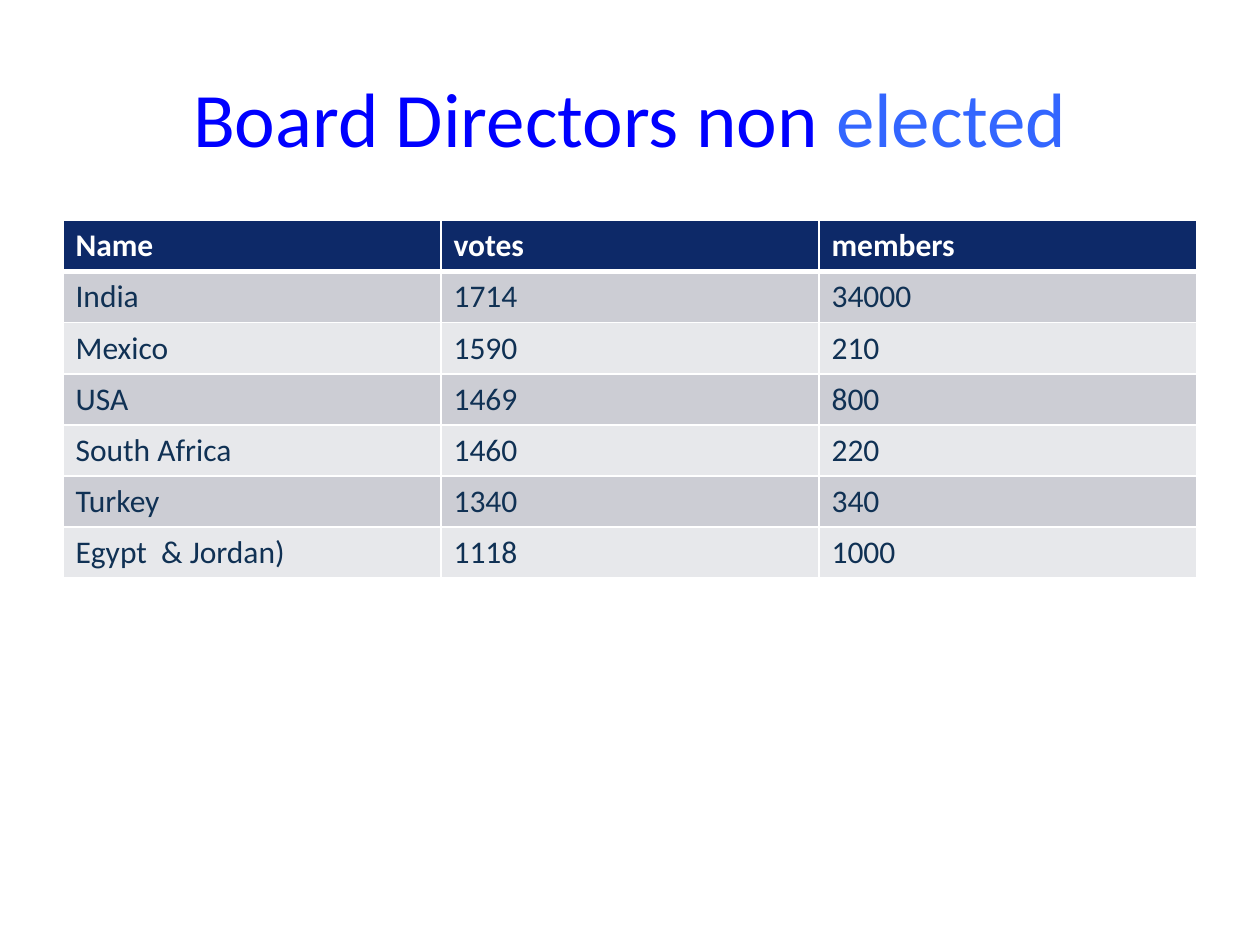
from dataclasses import dataclass

from lxml.etree import SubElement
from pptx import Presentation
from pptx.dml.color import RGBColor as RGB
from pptx.enum.text import MSO_ANCHOR as ANCHOR, PP_ALIGN as ALIGN
from pptx.oxml.ns import qn
from pptx.util import Pt


@dataclass(frozen=True)
class Theme:
    font: str = "Calibri"
    title_size: int = 44
    table_size: int = 18
    title: str = "0000FF"
    title_accent: str = "3366FF"
    header_fill: str = "0D2968"
    header_text: str = "FFFFFF"
    body_text: str = "103154"
    bands: tuple = ("CCCDD4", "E7E8EB")
    border: str = "FFFFFF"


THEME = Theme()

TITLE = [
    ("Board Directors non ", THEME.title),
    ("elected", THEME.title_accent),
]
ROWS = [
    ("Name", "votes", "members"),
    ("India", "1714", "34000"),
    ("Mexico", "1590", "210"),
    ("USA", "1469", "800"),
    ("South Africa", "1460", "220"),
    ("Turkey", "1340", "340"),
    ("Egypt  & Jordan)", "1118", "1000"),
]

SLIDE_W, SLIDE_H = 720, 540
MARGIN = 36
CONTENT_W = SLIDE_W - 2 * MARGIN
TITLE_TOP, TITLE_H = 21.6, 90
TABLE_TOP, ROW_H = 126, 29.2
THIN, THICK = 1, 3


def add_run(p, text, size, color, bold=False):
    r = p.add_run()
    r.text = text
    r.font.name = THEME.font
    r.font.size = Pt(size)
    r.font.bold = bold
    r.font.color.rgb = RGB.from_string(color)


def set_borders(cell, widths):
    """Draw the cell's edges; widths maps L, R, T and B to points."""
    tc_pr = cell._tc.get_or_add_tcPr()
    for side, width in widths.items():
        ln = SubElement(tc_pr, qn(f"a:ln{side}"), w=str(Pt(width)))
        fill = SubElement(ln, qn("a:solidFill"))
        SubElement(fill, qn("a:srgbClr"), val=THEME.border)


def add_title(slide):
    box = slide.shapes.add_textbox(
        Pt(MARGIN), Pt(TITLE_TOP), Pt(CONTENT_W), Pt(TITLE_H))
    tf = box.text_frame
    tf.word_wrap = True
    tf.vertical_anchor = ANCHOR.MIDDLE
    p = tf.paragraphs[0]
    p.alignment = ALIGN.CENTER
    for text, color in TITLE:
        add_run(p, text, THEME.title_size, color)


def add_votes_table(slide):
    table = slide.shapes.add_table(
        len(ROWS), len(ROWS[0]), Pt(MARGIN), Pt(TABLE_TOP),
        Pt(CONTENT_W), Pt(ROW_H * len(ROWS))).table
    for i, values in enumerate(ROWS):
        table.rows[i].height = Pt(ROW_H)
        header = i == 0
        fill = THEME.header_fill if header else THEME.bands[(i - 1) % 2]
        color = THEME.header_text if header else THEME.body_text
        widths = {"L": THIN, "R": THIN,
                  "T": THICK if i == 1 else THIN,
                  "B": THICK if header else THIN}
        for j, value in enumerate(values):
            cell = table.cell(i, j)
            set_borders(cell, widths)
            cell.fill.solid()
            cell.fill.fore_color.rgb = RGB.from_string(fill)
            add_run(cell.text_frame.paragraphs[0], value,
                    THEME.table_size, color, bold=header)


def main():
    prs = Presentation()
    prs.slide_width, prs.slide_height = Pt(SLIDE_W), Pt(SLIDE_H)
    slide = prs.slides.add_slide(prs.slide_layouts[6])
    add_title(slide)
    add_votes_table(slide)
    prs.save("out.pptx")


if __name__ == "__main__":
    main()
